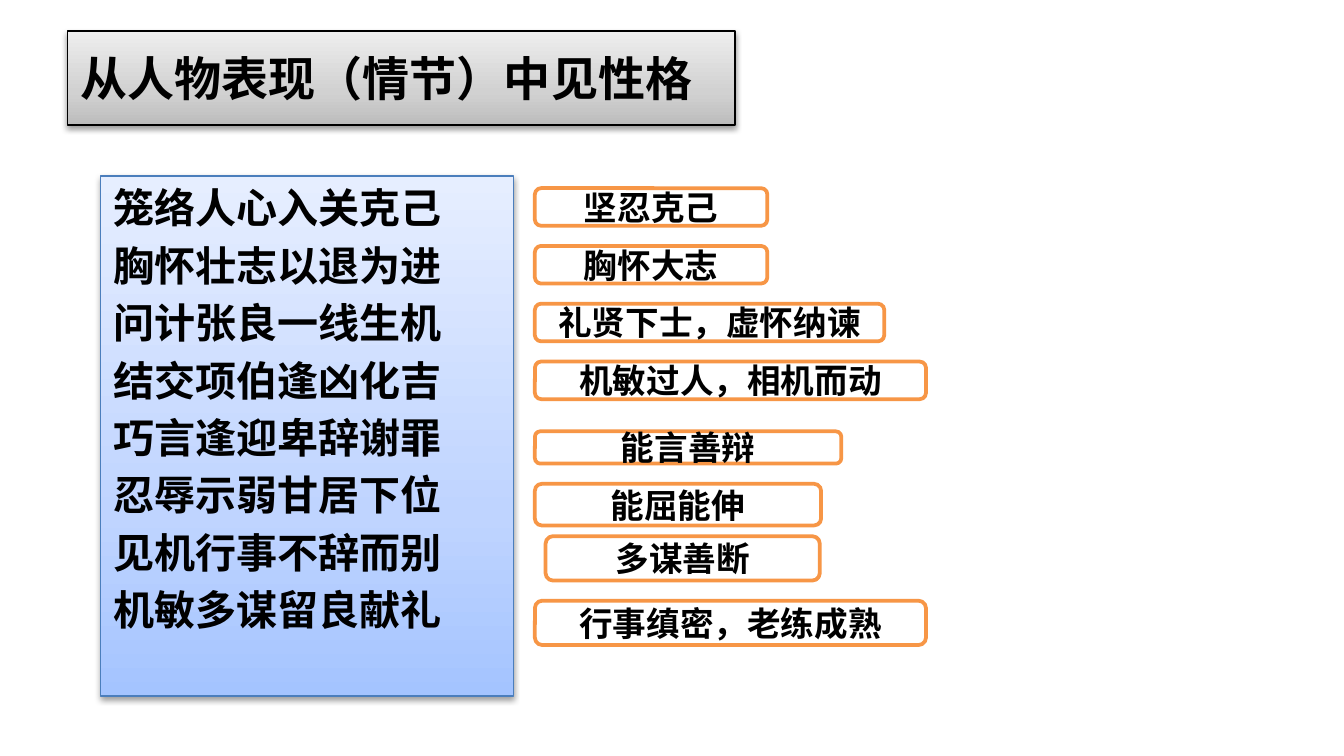
from copy import deepcopy
from dataclasses import dataclass

from lxml.etree import SubElement
from pptx import Presentation
from pptx.dml.color import RGBColor
from pptx.enum.shapes import MSO_SHAPE
from pptx.enum.text import MSO_ANCHOR, MSO_AUTO_SIZE, PP_ALIGN
from pptx.oxml.ns import qn
from pptx.util import Inches, Pt


@dataclass(frozen=True)
class Theme:
    """Colours and type sizes of the slide."""
    font: str = "Calibri"
    ink: str = "000000"
    paper: str = "FFFFFF"
    trim: str = "F79646"
    edge: str = "4B7EBC"
    gray: tuple = ("BDBDBD", "D1D1D1", "EEEEEE")
    blue: tuple = ("A4C4FF", "BFD4FF", "E6EEFF")
    head: float = 25.2
    body: float = 22
    tag: float = 18


THEME = Theme()
HEAD = "从人物表现（情节）中见性格"
PLOTS = (
    "笼络人心入关克己", "胸怀壮志以退为进", "问计张良一线生机", "结交项伯逢凶化吉",
    "巧言逢迎卑辞谢罪", "忍辱示弱甘居下位", "见机行事不辞而别", "机敏多谋留良献礼",
)
TRAITS = (
    ("坚忍克己", 0, 0, 1.73, 0.28),
    ("胸怀大志", 0, 0.43, 1.73, 0.28),
    ("礼贤下士，虚怀纳谏", 0, 0.86, 2.6, 0.28),
    ("机敏过人，相机而动", 0, 1.29, 2.91, 0.28),
    ("能言善辩", 0, 1.81, 2.28, 0.24),
    ("能屈能伸", 0, 2.2, 2.13, 0.31),
    ("多谋善断", 0.08, 2.59, 2.04, 0.33),
    ("行事缜密，老练成熟", 0, 3.07, 2.91, 0.33),
)


def apply(item, style):
    """Set each format value on the item."""
    for name, value in style.items():
        setattr(item, name, value)


def place(shape, box):
    """Move the shape to a box given in inches."""
    names = ("left", "top", "width", "height")
    apply(shape, dict(zip(names, map(Inches, box))))


def outline(shape, tint, width):
    """Draw a solid outline."""
    shape.line.color.rgb = RGBColor.from_string(tint)
    shape.line.width = Pt(width)


def shade(shape, tints):
    """Fill with an upward blend and add a soft drop shadow."""
    fill = shape.fill
    fill.gradient()
    fill.gradient_angle = 90
    props = shape._element.spPr
    stops = props.find(qn("a:gradFill")).find(qn("a:gsLst"))
    stops.append(deepcopy(stops[0]))
    for stop, tint, spot in zip(fill.gradient_stops, tints, (0, 0.35, 1)):
        stop.color.rgb = RGBColor.from_string(tint)
        stop.position = spot
    shape.shadow.inherit = False
    drop = SubElement(
        props.find(qn("a:effectLst")), qn("a:outerShdw"),
        blurRad=str(Pt(3.1)), dist=str(Pt(1.6)), dir="5400000", rotWithShape="0")
    tone = SubElement(drop, qn("a:srgbClr"), val=THEME.ink)
    SubElement(tone, qn("a:alpha"), val="38000")


def write(shape, lines, size, frame, para):
    """Write one bold paragraph for each line."""
    text = shape.text_frame
    text.text = "\n".join(lines)
    apply(text, {"word_wrap": True, "auto_size": MSO_AUTO_SIZE.NONE, **frame})
    for part in text.paragraphs:
        apply(part, para)
        for run in part.runs:
            apply(run.font, {"name": THEME.font, "size": Pt(size), "bold": True})
            run.font.color.rgb = RGBColor.from_string(THEME.ink)


def add_head(slide, box):
    """Format the title as a gray banner."""
    shape = slide.shapes.title
    place(shape, box)
    shade(shape, THEME.gray)
    outline(shape, THEME.ink, 0.75)
    write(shape, [HEAD], THEME.head,
          {"vertical_anchor": MSO_ANCHOR.MIDDLE}, {"alignment": PP_ALIGN.LEFT})


def add_plots(slide, box):
    """List the plot points in a blue panel."""
    shape = slide.shapes.add_shape(MSO_SHAPE.RECTANGLE, 0, 0, 0, 0)
    place(shape, box)
    shade(shape, THEME.blue)
    outline(shape, THEME.edge, 0.75)
    write(shape, PLOTS, THEME.body,
          {"vertical_anchor": MSO_ANCHOR.TOP},
          {"alignment": PP_ALIGN.LEFT, "line_spacing": Pt(THEME.body * 1.2),
           "space_after": Pt(THEME.body * 0.2)})


def add_traits(slide, box):
    """Set the trait tags within the box."""
    left, top = box[:2]
    for label, across, down, width, height in TRAITS:
        shape = slide.shapes.add_shape(MSO_SHAPE.ROUNDED_RECTANGLE, 0, 0, 0, 0)
        place(shape, (left + across, top + down, width, height))
        shape.shadow.inherit = False
        shape.fill.solid()
        shape.fill.fore_color.rgb = RGBColor.from_string(THEME.paper)
        outline(shape, THEME.trim, 2)
        write(shape, [label], THEME.tag,
              {"vertical_anchor": MSO_ANCHOR.MIDDLE},
              {"alignment": PP_ALIGN.CENTER})


def main():
    """Build and save the slide."""
    deck = Presentation()
    width = Inches(10)
    apply(deck, {"slide_width": width, "slide_height": width * 9 // 16})
    slide = deck.slides.add_slide(deck.slide_layouts.get_by_name("Title Only"))
    add_head(slide, (0.5, 0.23, 4.97, 0.7))
    add_plots(slide, (0.75, 1.31, 3.07, 3.87))
    add_traits(slide, (3.98, 1.4, 2.91, 3.4))
    deck.save("out.pptx")


if __name__ == "__main__":
    main()
